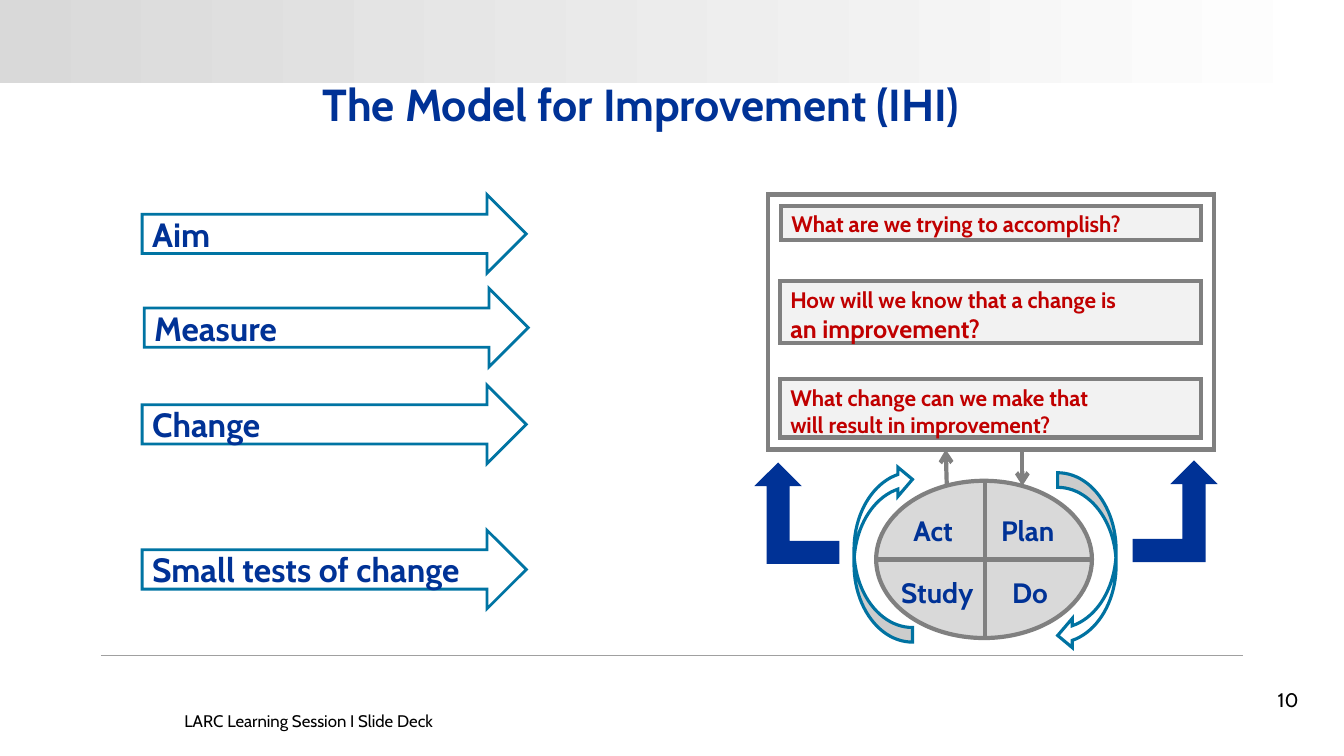
from dataclasses import dataclass

from lxml.etree import SubElement
from pptx import Presentation
from pptx.dml.color import RGBColor
from pptx.enum.shapes import MSO_CONNECTOR, MSO_SHAPE
from pptx.enum.text import MSO_ANCHOR, PP_ALIGN
from pptx.oxml.ns import qn
from pptx.util import Inches, Pt

FONT = "Cabin"
NAVY, TEAL, CYCLE_TEAL = "003296", "0074A3", "0072A1"
GRAY, PALE, SILVER = "808080", "F2F2F2", "D9D9D9"
RED, WHITE, BLACK, RULE = "C00000", "FFFFFF", "000000", "A0A0A0"


@dataclass
class Step:
    text: str
    left: float
    top: float


@dataclass
class Question:
    lines: list[tuple[str, int]]
    left: float
    top: float
    width: float
    height: float


@dataclass
class Quadrant:
    text: str
    left: float
    top: float
    width: float


@dataclass
class Line:
    start: tuple[float, float]
    end: tuple[float, float]
    arrow: bool = False


@dataclass
class TurnArrow:
    kind: MSO_SHAPE
    box: tuple[float, float, float, float]
    fill: str
    line: str
    rotation: int = 0
    flip: bool = False


STEPS = [
    Step("Aim", 1.41, 1.93),
    Step("Measure", 1.43, 2.86),
    Step("Change", 1.41, 3.82),
    Step("Small tests of change", 1.41, 5.26),
]
QUESTIONS = [
    Question([("What are we trying to accomplish?", 16)], 7.75, 2.04, 4.16, 0.34),
    Question([("How will we know that a change is", 16), ("an improvement?", 18)],
             7.74, 2.79, 4.17, 0.61),
    Question([("What change can we make that", 16), ("will result in improvement?", 16)],
             7.74, 3.76, 4.17, 0.58),
]
QUADRANTS = [
    Quadrant("Act", 8.96, 5.04, 0.65),
    Quadrant("Plan", 9.83, 5.04, 0.79),
    Quadrant("Study", 8.84, 5.66, 0.97),
    Quadrant("Do", 9.94, 5.66, 0.68),
]
CYCLE_LINES = [
    Line((9.77, 4.77), (9.77, 6.33)),
    Line((8.69, 5.55), (10.84, 5.55)),
    Line((9.39, 4.8), (9.38, 4.46), arrow=True),
    Line((10.14, 4.47), (10.14, 4.82), arrow=True),
]
TURN_ARROWS = [
    TurnArrow(MSO_SHAPE.BENT_UP_ARROW, (7.52, 4.61, 0.79, 0.97), NAVY, NAVY, flip=True),
    TurnArrow(MSO_SHAPE.BENT_UP_ARROW, (11.25, 4.59, 0.79, 0.97), NAVY, NAVY),
    TurnArrow(MSO_SHAPE.CURVED_LEFT_ARROW, (10.49, 4.69, 0.58, 1.76), WHITE, CYCLE_TEAL),
    TurnArrow(MSO_SHAPE.CURVED_LEFT_ARROW, (8.47, 4.61, 0.58, 1.76), WHITE, CYCLE_TEAL,
              rotation=180),
]


def rgb(color: str) -> RGBColor:
    return RGBColor.from_string(color)


def add_shape(s, kind, box, fill=None, line=None, width=1.0):
    sp = s.shapes.add_shape(kind, *map(Inches, box))
    sp.shadow.inherit = False
    if fill:
        sp.fill.solid()
        sp.fill.fore_color.rgb = rgb(fill)
    else:
        sp.fill.background()
    if line:
        sp.line.color.rgb = rgb(line)
        sp.line.width = Pt(width)
        SubElement(sp.line._get_or_add_ln(), qn("a:miter"), lim="800000")
    else:
        sp.line.fill.background()
    return sp


def add_line(s, line: Line, color: str, width: float):
    ends = map(Inches, (*line.start, *line.end))
    c = s.shapes.add_connector(MSO_CONNECTOR.STRAIGHT, *ends)
    c.line.color.rgb = rgb(color)
    c.line.width = Pt(width)
    if line.arrow:
        SubElement(c.line._get_or_add_ln(), qn("a:tailEnd"), type="arrow")
    SubElement(c._element.spPr, qn("a:effectLst"))
    return c


def write(sp, *lines: tuple[str, int], color=NAVY, bold=True, align=PP_ALIGN.LEFT,
          anchor=MSO_ANCHOR.TOP, side=0.1, spacing=None):
    tf = sp.text_frame
    tf.word_wrap = True
    tf.vertical_anchor = anchor
    tf.margin_left = tf.margin_right = Inches(side)
    for i, (text, size) in enumerate(lines):
        p = tf.add_paragraph() if i else tf.paragraphs[0]
        p.alignment = align
        if spacing:
            p.line_spacing = spacing
        r = p.add_run()
        r.text = text
        r.font.name = FONT
        r.font.size = Pt(size)
        r.font.bold = bold
        r.font.color.rgb = rgb(color)


def add_text(s, box, text: str, size: int, **fmt):
    write(s.shapes.add_textbox(*map(Inches, box)), (text, size), **fmt)


def main():
    prs = Presentation()
    prs.slide_width, prs.slide_height = Inches(13.33), Inches(7.5)
    s = prs.slides.add_slide(prs.slide_layouts[6])

    # Header band and footer rule
    band = add_shape(s, MSO_SHAPE.RECTANGLE, (0, 0, 13.33, 0.82))
    band.fill.gradient()
    band.fill.gradient_angle = 0
    for stop, color in zip(band.fill.gradient_stops, (SILVER, WHITE)):
        stop.color.rgb = rgb(color)
    add_line(s, Line((1, 6.5), (12.33, 6.5)), RULE, 0.75)

    # Title, footer and page number
    add_text(s, (3.2, 0.79, 6.93, 0.62), "The Model for Improvement (IHI)", 32,
             side=0, spacing=0.85)
    add_text(s, (1.73, 7, 3, 0.3), "LARC Learning Session I Slide Deck", 12,
             color=BLACK, bold=False)
    add_text(s, (9.88, 6.76, 3, 0.4), "10", 14, color=BLACK, bold=False,
             align=PP_ALIGN.RIGHT, anchor=MSO_ANCHOR.MIDDLE, side=0, spacing=0.9)

    # Step arrows
    for step in STEPS:
        sp = add_shape(s, MSO_SHAPE.RIGHT_ARROW, (step.left, step.top, 3.81, 0.78),
                       WHITE, TEAL, 2)
        write(sp, (step.text, 24), anchor=MSO_ANCHOR.MIDDLE)

    # Framed questions
    for q in QUESTIONS:
        sp = add_shape(s, MSO_SHAPE.RECTANGLE, (q.left, q.top, q.width, q.height),
                       PALE, GRAY, 3)
        write(sp, *q.lines, color=RED)
    add_shape(s, MSO_SHAPE.RECTANGLE, (7.62, 1.93, 4.42, 2.53), None, GRAY, 3)

    # Plan-Do-Study-Act cycle
    add_shape(s, MSO_SHAPE.OVAL, (8.69, 4.77, 2.14, 1.56), SILVER, GRAY, 3)
    for line in CYCLE_LINES:
        add_line(s, line, GRAY, 3)
    for quad in QUADRANTS:
        add_text(s, (quad.left, quad.top, quad.width, 0.41), quad.text, 20)

    # Arrows around the cycle
    for arrow in TURN_ARROWS:
        sp = add_shape(s, arrow.kind, arrow.box, arrow.fill, arrow.line, 2.25)
        sp.rotation = arrow.rotation
        if arrow.flip:
            sp._element.spPr.get_or_add_xfrm().set("flipH", "1")

    prs.save("out.pptx")


if __name__ == "__main__":
    main()
